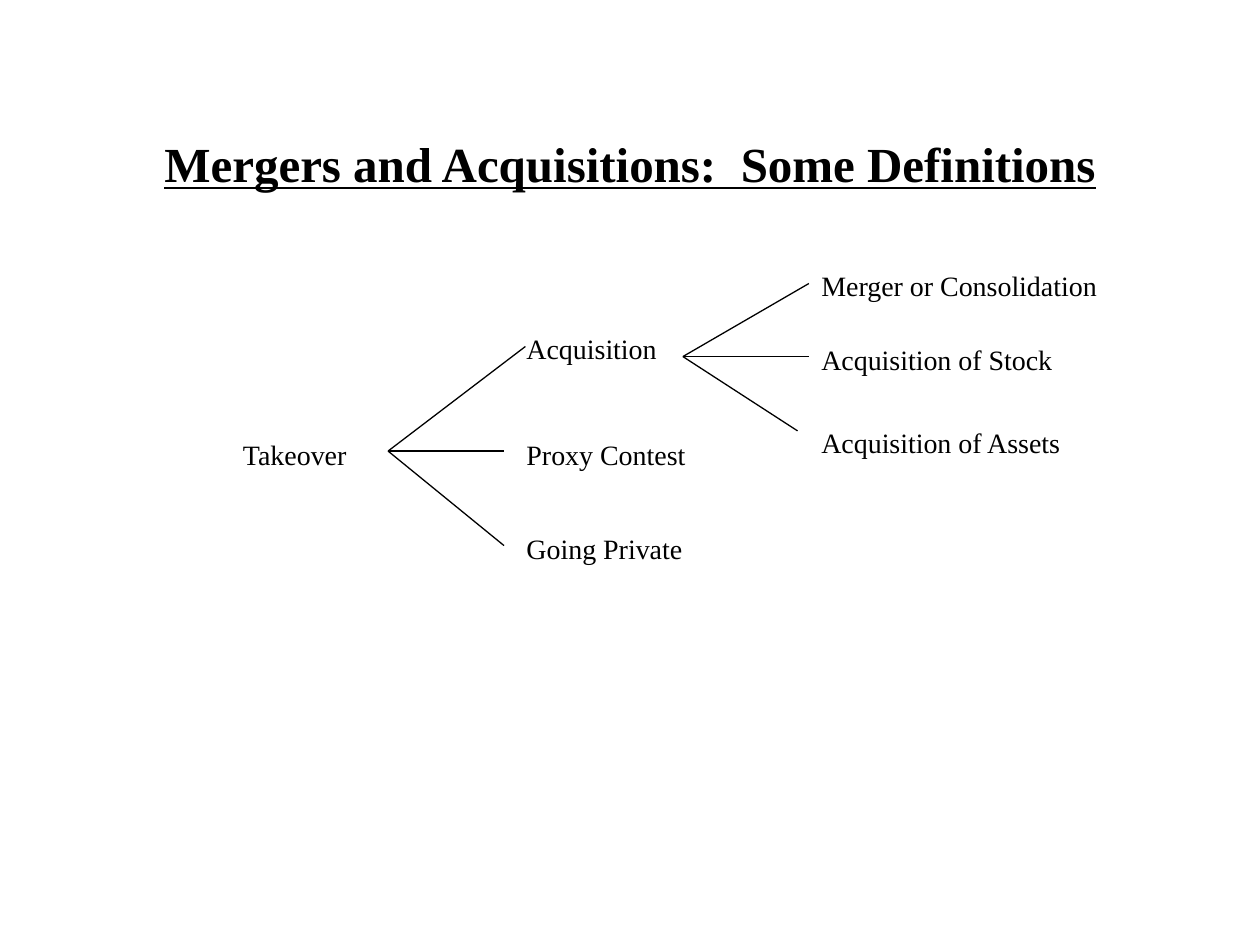
from pptx import Presentation
from pptx.dml.color import RGBColor
from pptx.enum import shapes, text
from pptx.util import Inches, Pt

BLACK = RGBColor(0, 0, 0)
FONT = "Times New Roman"
TITLE = "Mergers and Acquisitions:  Some Definitions"

# Columns of the tree: left edge, then (label, top, width)
COLUMNS = [
    (1.83, [("Takeover", 3.42, 1.58)]),
    (4.08, [("Acquisition", 2.58, 1.58),
            ("Proxy Contest", 3.42, 1.75),
            ("Going Private", 4.17, 1.75)]),
    (6.42, [("Merger or Consolidation", 2.08, 2.58),
            ("Acquisition of Stock", 2.67, 2.17),
            ("Acquisition of Assets", 3.33, 2.42)]),
]
# Fans of branches: shared root, then the tips
FANS = [
    ((3.08, 3.58), [(4.17, 2.75), (4, 3.58), (4, 4.33)]),
    ((5.42, 2.83), [(6.42, 2.25), (6.42, 2.83), (6.33, 3.42)]),
]


def style(par, size):
    par.font.name = FONT
    par.font.size = Pt(size)
    par.font.color.rgb = BLACK


def add_title(slide):
    title = slide.shapes.title
    title.left, title.top = Inches(0.75), Inches(0.67)
    title.width, title.height = Inches(8.5), Inches(1.25)
    frame = title.text_frame
    frame.text = TITLE
    frame.vertical_anchor = text.MSO_ANCHOR.MIDDLE
    par = frame.paragraphs[0]
    par.alignment = text.PP_ALIGN.CENTER
    style(par, 28)
    par.font.bold = True
    par.font.underline = True


def add_label(slide, label, left, top, width):
    box = slide.shapes.add_textbox(
        Inches(left), Inches(top), Inches(width), Inches(0.37))
    frame = box.text_frame
    frame.text = label
    frame.word_wrap = True
    frame.auto_size = text.MSO_AUTO_SIZE.SHAPE_TO_FIT_TEXT
    style(frame.paragraphs[0], 16)


def add_branch(slide, root, tip):
    ends = [Inches(n) for n in root + tip]
    line = slide.shapes.add_connector(shapes.MSO_CONNECTOR.STRAIGHT, *ends)
    line.line.color.rgb = BLACK
    line.line.width = Pt(0.75)
    props = line._element.spPr
    props.append(props.makeelement(
        "{http://schemas.openxmlformats.org/drawingml/2006/main}effectLst", {}))


def main():
    deck = Presentation()
    deck.slide_width, deck.slide_height = Inches(10), Inches(7.5)
    slide = deck.slides.add_slide(deck.slide_layouts[5])
    add_title(slide)
    for left, labels in COLUMNS:
        for label, top, width in labels:
            add_label(slide, label, left, top, width)
    for root, tips in FANS:
        for tip in tips:
            add_branch(slide, root, tip)
    deck.save("out.pptx")


if __name__ == "__main__":
    main()
